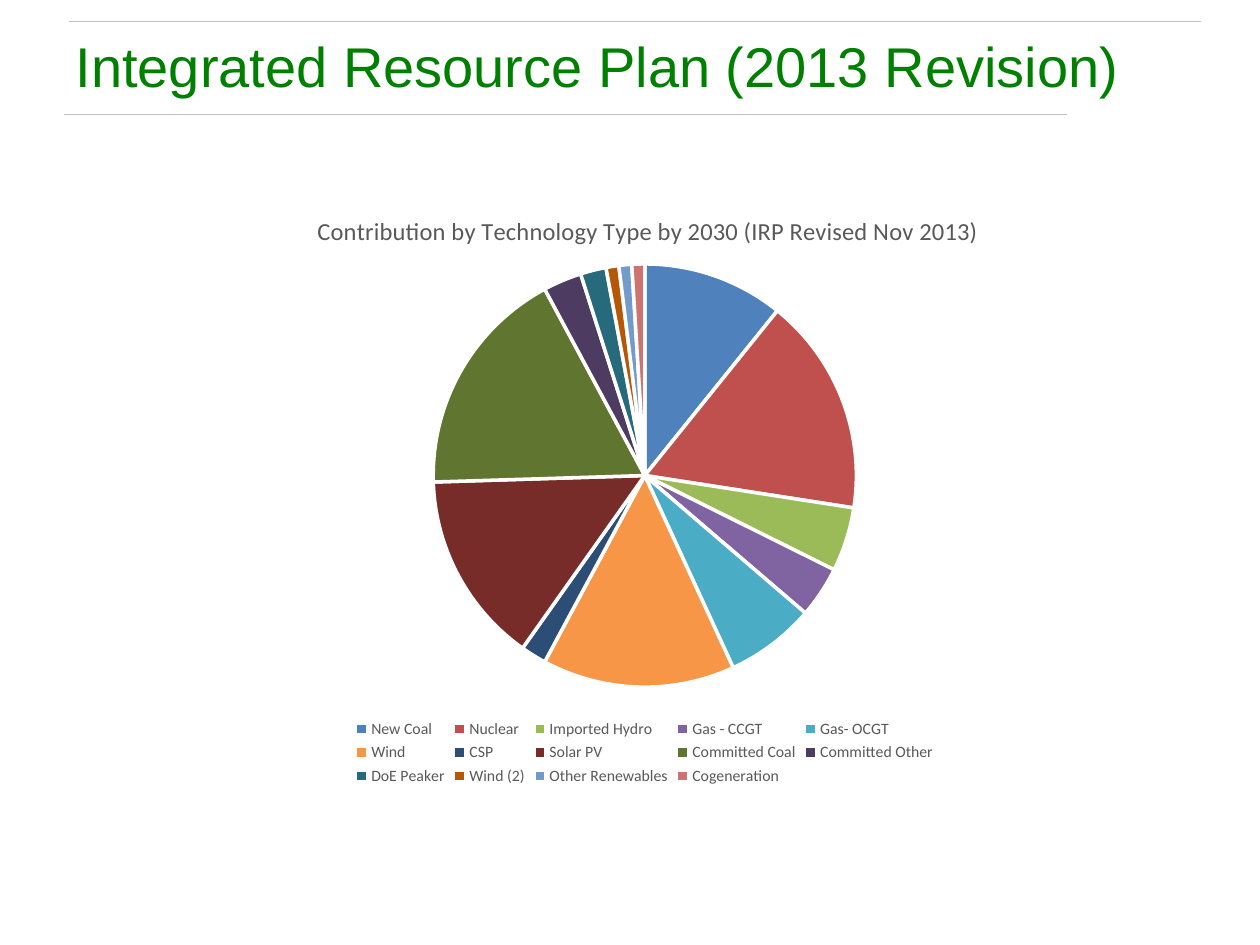
from lxml import etree
from pptx import Presentation
from pptx.chart.data import CategoryChartData as ChartData
from pptx.dml.color import RGBColor
from pptx.enum.chart import XL_CHART_TYPE as ChartType, XL_LEGEND_POSITION as LegendPosition
from pptx.enum.shapes import MSO_CONNECTOR as Connector
from pptx.enum.text import MSO_ANCHOR as Anchor, PP_ALIGN as Align
from pptx.oxml import parse_xml
from pptx.oxml.ns import nsdecls, qn
from pptx.util import Pt

# Technology, share of capacity, slice colour
TECHNOLOGIES = [
    ("New Coal", 11, "4F81BD"),
    ("Nuclear", 17, "C0504D"),
    ("Imported Hydro", 5, "9BBB59"),
    ("Gas - CCGT", 4, "8064A2"),
    ("Gas- OCGT", 7, "4BACC6"),
    ("Wind", 15, "F79646"),
    ("CSP", 2, "2C4D75"),
    ("Solar PV", 15, "772C2A"),
    ("Committed Coal", 18, "5F7530"),
    ("Committed Other", 3, "4D3B62"),
    ("DoE Peaker", 2, "276A7C"),
    ("Wind (2)", 1, "B65708"),
    ("Other Renewables", 1, "729ACA"),
    ("Cogeneration", 1, "CD7371"),
]


def color(hex_string):
    return RGBColor.from_string(hex_string)


def style_font(font, name, size, hex_string):
    font.name = name
    font.size = Pt(size)
    font.bold = False
    font.color.rgb = color(hex_string)


def add_rule(slide, left, right, top):
    rule = slide.shapes.add_connector(
        Connector.STRAIGHT, Pt(left), Pt(top), Pt(right), Pt(top))
    rule.line.color.rgb = color("C0C0C0")
    rule.line.width = Pt(0.75)
    etree.SubElement(rule._element.spPr, qn("a:effectLst"))


def set_title(slide, text):
    title = slide.shapes.title
    title.left, title.top, title.width, title.height = Pt(36), Pt(20), Pt(648), Pt(34)
    frame = title.text_frame
    frame.text = text
    frame.vertical_anchor = Anchor.MIDDLE
    para = frame.paragraphs[0]
    para.alignment = Align.LEFT
    style_font(para.runs[0].font, "Arial", 32, "008000")


def manual_layout(x, y, size=None, inner=False):
    """Build a chart layout from fractions of the chart area."""
    values = [("xMode", "edge"), ("yMode", "edge"), ("x", x), ("y", y)]
    if inner:
        values.insert(0, ("layoutTarget", "inner"))
    if size:
        values += zip("wh", size)
    parts = "".join(f'<c:{tag} val="{value}"/>' for tag, value in values)
    return parse_xml(
        f'<c:layout {nsdecls("c")}><c:manualLayout>{parts}</c:manualLayout></c:layout>')


def place_layout(parent, layout, after=None):
    for old in parent.findall(qn("c:layout")):
        parent.remove(old)
    if after is None:
        parent.insert(0, layout)
    else:
        after.addnext(layout)


def add_pie(slide, title):
    names, shares, fills = zip(*TECHNOLOGIES)
    data = ChartData()
    data.categories = names
    data.add_series("Series 1", shares)
    chart = slide.shapes.add_chart(
        ChartType.PIE, Pt(105), Pt(106), Pt(527), Pt(345.5), data).chart
    style_font(chart.font, "Calibri", 10, "000000")

    # Chart title
    chart.has_title = True
    frame = chart.chart_title.text_frame
    frame.text = title
    style_font(frame.paragraphs[0].runs[0].font, "Calibri", 14, "595959")
    heading = chart.chart_title._element
    place_layout(heading, manual_layout(0.14, 0.04), heading.find(qn("c:tx")))

    # Legend
    chart.has_legend = True
    chart.legend.position = LegendPosition.BOTTOM
    chart.legend.include_in_layout = False
    style_font(chart.legend.font, "Calibri", 9, "595959")

    # Slices
    plot = chart.plots[0]
    plot.vary_by_categories = True
    for index, fill in enumerate(fills):
        piece = plot.series[0].points[index].format
        piece.fill.solid()
        piece.fill.fore_color.rgb = color(fill)
        piece.line.color.rgb = color("FFFFFF")
        piece.line.width = Pt(2)
    plot_area = chart._chartSpace.chart.plotArea
    place_layout(plot_area, manual_layout(0.27, 0.13, (0.46, 0.7), inner=True))


def main():
    deck = Presentation()
    deck.slide_width, deck.slide_height = Pt(720), Pt(540)
    slide = deck.slides.add_slide(deck.slide_layouts[5])

    # Rules around the title
    add_rule(slide, 36.7, 609.8, 65.6)
    add_rule(slide, 39.6, 686.2, 12.2)

    add_pie(slide, "Contribution by Technology Type by 2030 (IRP Revised Nov 2013)")
    set_title(slide, "Integrated Resource Plan (2013 Revision)")
    deck.save("out.pptx")


if __name__ == "__main__":
    main()
